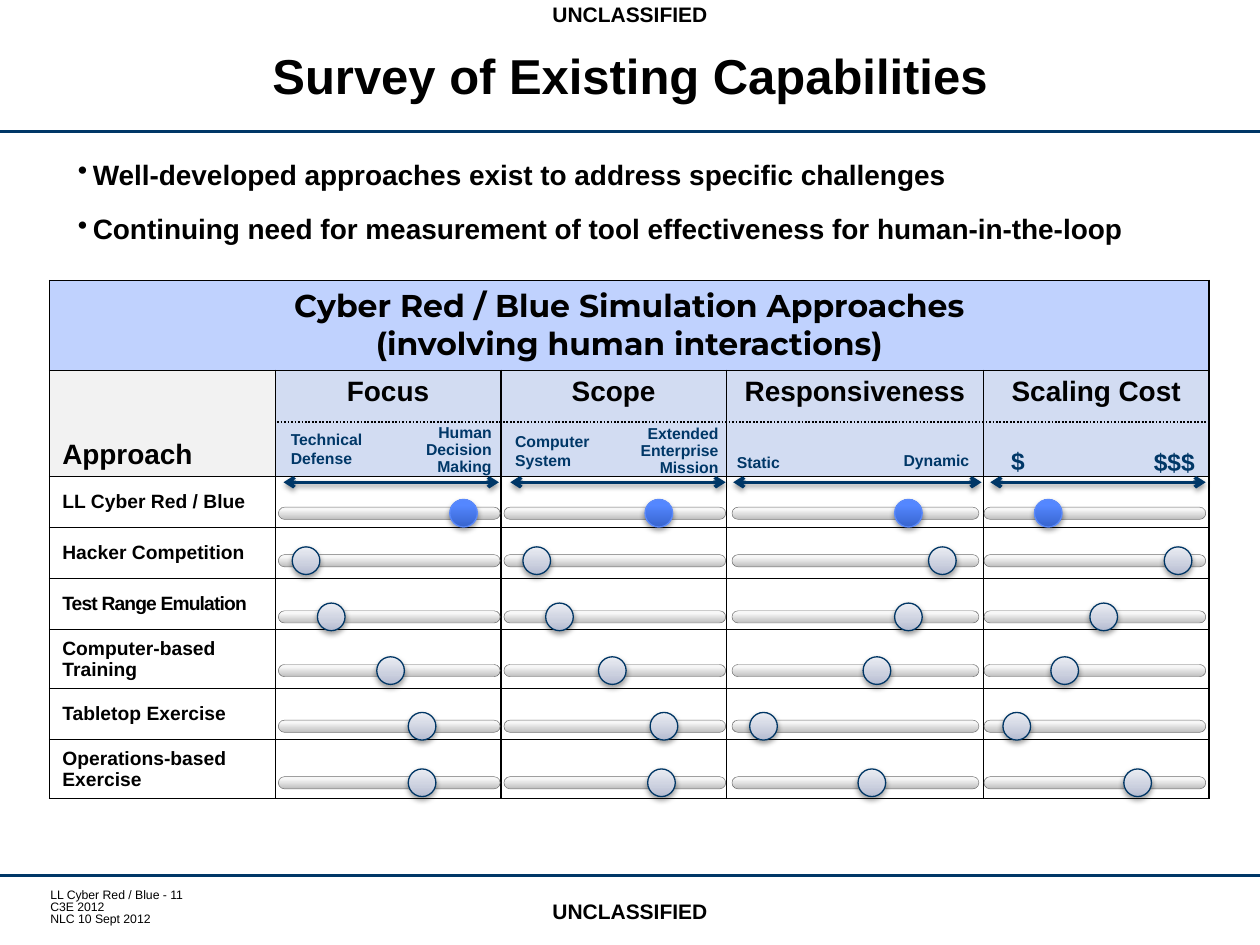
from lxml.etree import SubElement
from pptx import Presentation
from pptx.dml.color import RGBColor
from pptx.enum.dml import MSO_LINE
from pptx.enum.shapes import MSO_CONNECTOR, MSO_SHAPE
from pptx.enum.text import MSO_ANCHOR, PP_ALIGN
from pptx.oxml.ns import qn
from pptx.util import Pt

BLACK = RGBColor(0x00, 0x00, 0x00)
NAVY = RGBColor(0x00, 0x37, 0x67)
BANNER = RGBColor(0xC0, 0xD2, 0xFE)
HEADER = RGBColor(0xD2, 0xDC, 0xF2)
CORNER = RGBColor(0xF2, 0xF2, 0xF2)
TRACK_EDGE = RGBColor(0x6D, 0x6D, 0x6D)
KNOB_EDGE = RGBColor(0x00, 0x36, 0x65)
BLUE_EDGE = RGBColor(0x5B, 0x8A, 0xFB)
TRACK_SHADES = [(0, RGBColor(0xBE, 0xBE, 0xBE)), (80, RGBColor(0xF7, 0xF7, 0xF7)),
                (100, RGBColor(0xF8, 0xF8, 0xF8))]
KNOB_SHADES = [(0, RGBColor(0xB3, 0xBA, 0xD0)), (35, RGBColor(0xCA, 0xCF, 0xDE)),
               (100, RGBColor(0xEB, 0xED, 0xF3))]
BLUE_SHADES = [(0, RGBColor(0x37, 0x64, 0xCE)), (80, RGBColor(0x54, 0x87, 0xFF)),
               (100, RGBColor(0x56, 0x88, 0xFF))]

LEFT, CENTER, RIGHT = PP_ALIGN.LEFT, PP_ALIGN.CENTER, PP_ALIGN.RIGHT
TOP, MIDDLE, BOTTOM = MSO_ANCHOR.TOP, MSO_ANCHOR.MIDDLE, MSO_ANCHOR.BOTTOM

COLUMN_WIDTHS = [128.9, 128.9, 128.9, 146.9, 128.9]
ROW_HEIGHTS = [51.4, 60.6, 29.2, 29.2, 29.2, 32, 29.2, 32]
CRITERIA = ["Focus", "Scope", "Responsiveness", "Scaling Cost"]
APPROACHES = ["LL Cyber Red / Blue", "Hacker Competition", "Test Range Emulation",
              "Computer-based Training", "Tabletop Exercise", "Operations-based Exercise"]
KNOB_SIZE = 15.8
TRACK_HEIGHT = 7
SLIDER_CENTERS = [293.3, 320.4, 352.5, 383.2, 415, 447.3]
SLIDERS = [
    (159.1, 126.7, [257, 167, 181.4, 215.3, 233.3, 233.3]),
    (288, 126.7, [368.6, 298.8, 311.8, 342, 371.5, 370.1]),
    (418.3, 141.1, [511.2, 530.6, 511.2, 493.2, 428.4, 490.3]),
    (562.3, 126.7, [591.1, 665.3, 622.8, 600.5, 573.1, 642.2]),
]
RANGE_ARROWS = [(162, 285.1), (291.6, 414.7), (419, 560.9), (565.9, 689)]
RANGE_LABELS = [
    (481.7, 254.2, 79.2, 18, ["Dynamic"], 9, RIGHT, None),
    (414, 254.9, 87.8, 18, ["Static"], 9, LEFT, None),
    (205.2, 239, 82.8, 36.7, ["Human Decision", "Making"], 9, RIGHT, 0.9),
    (159.1, 241.9, 64.8, 28.8, ["Technical Defense"], 9, LEFT, None),
    (287.3, 243.4, 61.9, 28.8, ["Computer\nSystem"], 9, LEFT, None),
    (355, 239.8, 62.6, 36.7, ["Extended Enterprise Mission"], 9, RIGHT, 0.9),
    (651.6, 252, 38.9, 24.5, ["$$$"], 14, CENTER, None),
    (562.3, 251.3, 38.9, 24.5, ["$"], 14, CENTER, None),
]


def write(frame, lines, size, color=BLACK, bold=True, align=LEFT, spacing=None, font="Arial"):
    """Fill a text frame with one paragraph per line and return the paragraphs."""
    frame.word_wrap = True
    for index, line in enumerate(lines):
        paragraph = frame.paragraphs[0] if index == 0 else frame.add_paragraph()
        paragraph.text = line
        paragraph.alignment = align
        if spacing:
            paragraph.line_spacing = spacing
        paragraph.font.name = font
        paragraph.font.size = Pt(size)
        paragraph.font.bold = bold
        paragraph.font.color.rgb = color
    return frame.paragraphs


def add_text(slide, left, top, width, height, lines, size, anchor=TOP, **style):
    """Add a text box and return its frame."""
    frame = slide.shapes.add_textbox(Pt(left), Pt(top), Pt(width), Pt(height)).text_frame
    frame.vertical_anchor = anchor
    write(frame, lines, size, **style)
    return frame


def set_effects(shape, shadow=True):
    """Give a shape a soft shadow below it, or no shadow at all."""
    effects = SubElement(shape._element.spPr, qn("a:effectLst"))
    if shadow:
        outer = SubElement(effects, qn("a:outerShdw"), blurRad=str(Pt(3.1)), dist=str(Pt(1.6)),
                           dir="5400000", rotWithShape="0")
        black = SubElement(outer, qn("a:srgbClr"), val=str(BLACK))
        SubElement(black, qn("a:alpha"), val="38000")


def add_rule(slide, start, end, y, color, width, dash=None, arrows=False):
    """Add a horizontal line, optionally dotted or with arrows at both ends."""
    rule = slide.shapes.add_connector(MSO_CONNECTOR.STRAIGHT, Pt(start), Pt(y), Pt(end), Pt(y))
    rule.line.color.rgb = color
    rule.line.width = Pt(width)
    if dash:
        rule.line.dash_style = dash
    if arrows:
        for end_tag in ("a:headEnd", "a:tailEnd"):
            SubElement(rule.line._get_or_add_ln(), qn(end_tag), type="arrow")
    set_effects(rule, shadow=arrows)


def add_slider_part(slide, preset, left, center, width, height, shades, edge, edge_width, shadow):
    """Add a shape with a vertical gradient, centred on the given height."""
    part = slide.shapes.add_shape(preset, Pt(left), Pt(center - height / 2), Pt(width), Pt(height))
    part.fill.gradient()
    part.fill.gradient_angle = 90
    stops = part._element.spPr.find(".//" + qn("a:gsLst"))
    stops.clear()
    for position, shade in shades:
        stop = SubElement(stops, qn("a:gs"), pos=str(position * 1000))
        SubElement(stop, qn("a:srgbClr"), val=str(shade))
    part.line.color.rgb = edge
    part.line.width = Pt(edge_width)
    set_effects(part, shadow)
    return part


def add_sliders(slide):
    """Add a track and a knob for each approach under each criterion."""
    for left, width, knobs in SLIDERS:
        for row, (center, knob) in enumerate(zip(SLIDER_CENTERS, knobs)):
            track = add_slider_part(slide, MSO_SHAPE.ROUNDED_RECTANGLE, left, center, width,
                                    TRACK_HEIGHT, TRACK_SHADES, TRACK_EDGE, 0.25, False)
            track.adjustments[0] = 0.5
            shades, edge = (BLUE_SHADES, BLUE_EDGE) if row == 0 else (KNOB_SHADES, KNOB_EDGE)
            add_slider_part(slide, MSO_SHAPE.OVAL, knob, center, KNOB_SIZE, KNOB_SIZE,
                            shades, edge, 0.75, True)


def style_cell(cell, fill=None):
    """Give a cell black borders and a fill."""
    for side in ("a:lnL", "a:lnR", "a:lnT", "a:lnB"):
        border = SubElement(cell._tc.get_or_add_tcPr(), qn(side), w=str(Pt(1)))
        SubElement(SubElement(border, qn("a:solidFill")), qn("a:srgbClr"), val=str(BLACK))
    if fill is None:
        cell.fill.background()
    else:
        cell.fill.solid()
        cell.fill.fore_color.rgb = fill


def add_approach_table(slide):
    """Add the table of approaches against criteria."""
    table = slide.shapes.add_table(len(ROW_HEIGHTS), len(COLUMN_WIDTHS), Pt(28.4), Pt(160.3),
                                   Pt(sum(COLUMN_WIDTHS)), Pt(sum(ROW_HEIGHTS))).table
    table.first_row = table.horz_banding = False
    for column, width in zip(table.columns, COLUMN_WIDTHS):
        column.width = Pt(width)
    for row, height in zip(table.rows, ROW_HEIGHTS):
        row.height = Pt(height)
    fills = [[BANNER] * 5, [CORNER] + [HEADER] * 4] + [[None] * 5] * len(APPROACHES)
    for row, row_fills in zip(table.rows, fills):
        for cell, fill in zip(row.cells, row_fills):
            style_cell(cell, fill)

    banner = table.cell(0, 0)
    banner.merge(table.cell(0, 4))
    write(banner.text_frame, ["Cyber Red / Blue Simulation Approaches",
                              "(involving human interactions)"],
          18, align=CENTER, font="Montserrat")
    corner = table.cell(1, 0)
    corner.vertical_anchor = BOTTOM
    write(corner.text_frame, ["Approach"], 16)
    for column, criterion in enumerate(CRITERIA, 1):
        write(table.cell(1, column).text_frame, [criterion], 16, align=CENTER)
    for row, approach in enumerate(APPROACHES, 2):
        cell = table.cell(row, 0)
        cell.vertical_anchor = MIDDLE
        paragraph = write(cell.text_frame, [approach], 11)[0]
        if approach == "Test Range Emulation":
            paragraph.runs[0].font._element.set("spc", "-50")


def add_bullets(slide):
    """Add the two bulleted statements."""
    frame = slide.shapes.add_textbox(Pt(37.4), Pt(86.4), Pt(657.4), Pt(62.6)).text_frame
    statements = ["Well-developed approaches exist to address specific challenges",
                  "Continuing need for measurement of tool effectiveness for human-in-the-loop"]
    for index, paragraph in enumerate([frame.paragraphs[0], frame.add_paragraph()]):
        properties = paragraph._p.get_or_add_pPr()
        properties.set("marL", str(Pt(8.6)))
        properties.set("indent", str(Pt(-8.6)))
        SubElement(properties, qn("a:buChar"), char="•")
        paragraph.space_before = Pt(6 * index)
        paragraph.space_after = Pt(6)
        paragraph.text = statements[index]
        paragraph.font.name = "Arial"
        paragraph.font.size = Pt(16)
        paragraph.font.bold = True
        paragraph.font.color.rgb = BLACK
    frame.word_wrap = True


def main():
    """Build the slide and save it."""
    deck = Presentation()
    deck.slide_width, deck.slide_height = Pt(720), Pt(540)
    slide = deck.slides.add_slide(deck.slide_layouts[6])

    for y in (74.9, 500.4):
        add_rule(slide, 0, 720, y, NAVY, 1.75)
    footer = add_text(slide, 25.2, 508.3, 172.8, 23,
                      ["LL Cyber Red / Blue - 11\nC3E 2012", "NLC 10 Sept 2012"],
                      7, bold=False, spacing=Pt(7))
    footer.margin_left = Pt(3.6)
    footer.margin_top = footer.margin_right = footer.margin_bottom = 0
    for y in (0, 512.6):
        add_text(slide, 228, y, 264, 15.8, ["UNCLASSIFIED"], 12, MIDDLE, align=CENTER)
    add_text(slide, 74.2, 16.6, 645.8 - 74.2, 56.2, ["Survey of Existing Capabilities"],
             28, MIDDLE, align=CENTER, spacing=Pt(30))
    add_bullets(slide)

    add_approach_table(slide)
    add_rule(slide, 158.4, 690.5, 241.2, BLACK, 1, dash=MSO_LINE.ROUND_DOT)
    for left, top, width, height, lines, size, align, spacing in RANGE_LABELS:
        add_text(slide, left, top, width, height, lines, size,
                 color=NAVY, align=align, spacing=spacing)
    for start, end in RANGE_ARROWS:
        add_rule(slide, start, end, 275.6, NAVY, 2, arrows=True)
    add_sliders(slide)
    deck.save("out.pptx")


if __name__ == "__main__":
    main()
